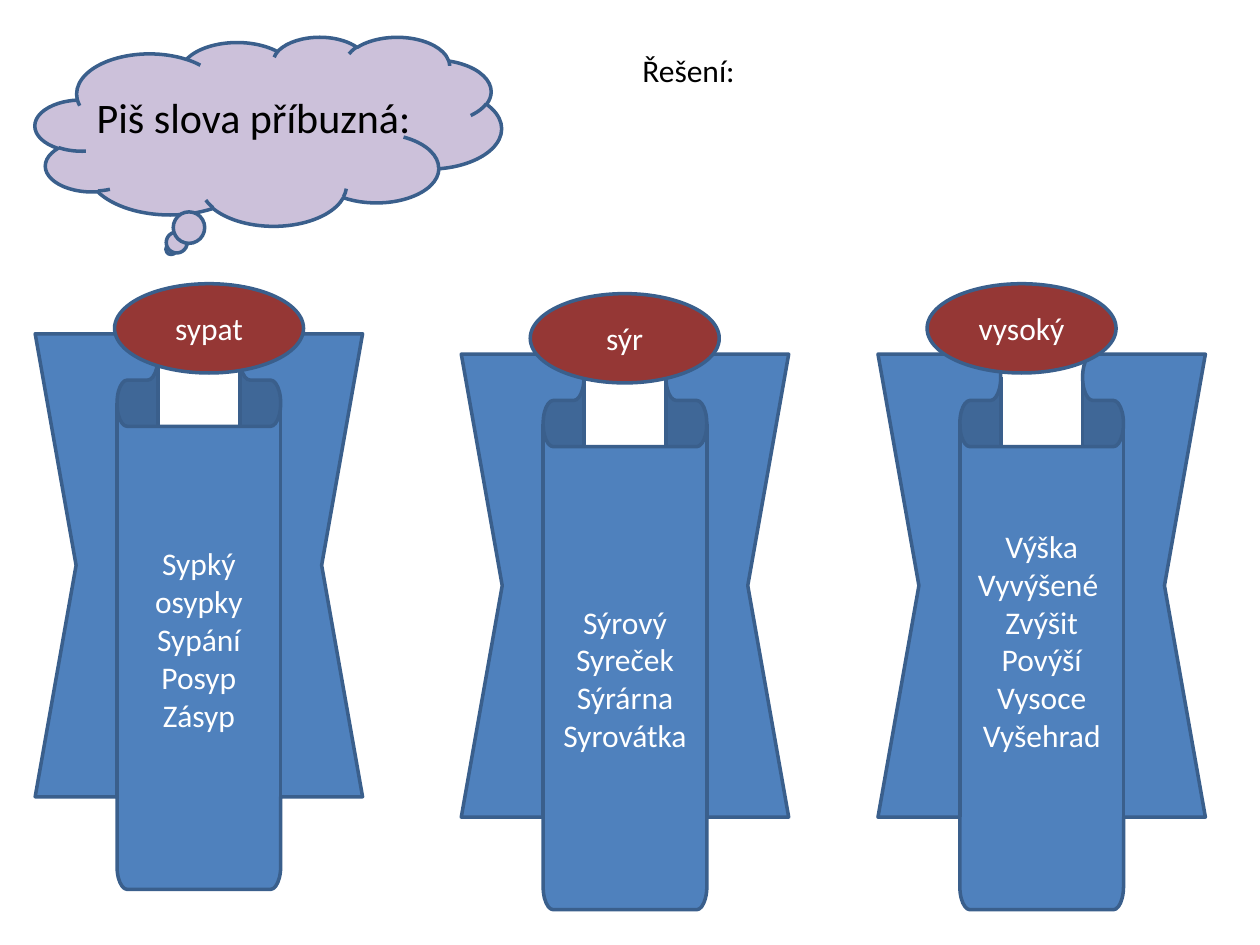
from dataclasses import dataclass

from pptx import Presentation
from pptx import util as u
from pptx.dml.color import RGBColor
from pptx.enum import shapes, text
from pptx.shapes.autoshape import Shape
from pptx.slide import Slide

MSO = shapes.MSO_SHAPE


@dataclass(frozen=True)
class Theme:
    font: str = "Calibri"
    title: float = 24
    body: float = 18
    line_width: float = 2
    cloud: str = "CCC1DA"
    ribbon: str = "4F81BD"
    head: str = "953735"
    outline: str = "3A5F8C"
    dark: str = "000000"
    light: str = "FFFFFF"


@dataclass(frozen=True)
class Box:
    left: float
    top: float
    width: float
    height: float

    def lengths(self) -> list[u.Length]:
        return [u.Cm(v) for v in (self.left, self.top, self.width, self.height)]


@dataclass(frozen=True)
class Family:
    root: str
    words: list[str]
    ribbon_left: float
    ribbon_top: float
    head_left: float
    head_top: float
    bottom_inset: float


THEME = Theme()
RIBBON_SIZE = (6.6, 11.2)
HEAD_SIZE = (3.81, 1.8)
FAMILIES = [
    Family("sypat", ["Sypký osypky", "Sypání", "Posyp", "Zásyp"],
           0.71, 6.73, 2.31, 5.72, 0.89),
    Family("sýr", ["Sýrový", "Syreček", "Sýrárna", "Syrovátka"],
           9.3, 7.14, 10.69, 5.92, 0.13),
    Family("vysoký", ["Výška", "Vyvýšené ", "Zvýšit", "Povýší", "Vysoce", "Vyšehrad"],
           17.7, 7.14, 18.69, 5.72, 1.65),
]


def write(sp: Shape, lines: list[str], size: float, color: str,
          align: text.PP_ALIGN) -> None:
    tf = sp.text_frame
    tf.word_wrap = True
    for i, line in enumerate(lines):
        p = tf.paragraphs[0] if i == 0 else tf.add_paragraph()
        p.text = line
        p.alignment = align
        p.font.name = THEME.font
        p.font.size = u.Pt(size)
        p.font.color.rgb = RGBColor.from_string(color)


def add_figure(s: Slide, kind: MSO, box: Box, fill: str) -> Shape:
    sp = s.shapes.add_shape(kind, *box.lengths())
    sp.shadow.inherit = False
    sp.fill.solid()
    sp.fill.fore_color.rgb = RGBColor.from_string(fill)
    sp.line.color.rgb = RGBColor.from_string(THEME.outline)
    sp.line.width = u.Pt(THEME.line_width)
    return sp


def add_label(s: Slide, box: Box, line: str, size: float) -> None:
    sp = s.shapes.add_textbox(*box.lengths())
    write(sp, [line], size, THEME.dark, text.PP_ALIGN.LEFT)


def add_centred(s: Slide, kind: MSO, box: Box, fill: str, lines: list[str],
                bottom_inset: float = 0.13) -> None:
    sp = add_figure(s, kind, box, fill)
    write(sp, lines, THEME.body, THEME.light, text.PP_ALIGN.CENTER)
    sp.text_frame.vertical_anchor = text.MSO_ANCHOR.MIDDLE
    sp.text_frame.margin_bottom = u.Cm(bottom_inset)


def add_family(s: Slide, f: Family) -> None:
    add_centred(s, MSO.DOWN_RIBBON, Box(f.ribbon_left, f.ribbon_top, *RIBBON_SIZE),
                THEME.ribbon, f.words, f.bottom_inset)
    add_centred(s, MSO.FLOWCHART_CONNECTOR, Box(f.head_left, f.head_top, *HEAD_SIZE),
                THEME.head, [f.root])


def main() -> None:
    prs = Presentation()
    prs.slide_width, prs.slide_height = u.Cm(25.4), u.Cm(19.05)
    s = prs.slides.add_slide(prs.slide_layouts[6])
    add_figure(s, MSO.CLOUD_CALLOUT, Box(0.71, 0.74, 9.4, 3.81), THEME.cloud)
    add_label(s, Box(1.7, 1.73, 14.6, 1.27), "Piš slova příbuzná:", THEME.title)
    for family in FAMILIES:
        add_family(s, family)
    add_label(s, Box(12.7, 0.91, 5.21, 1.02), "Řešení:", THEME.body)
    prs.save("out.pptx")


if __name__ == "__main__":
    main()
